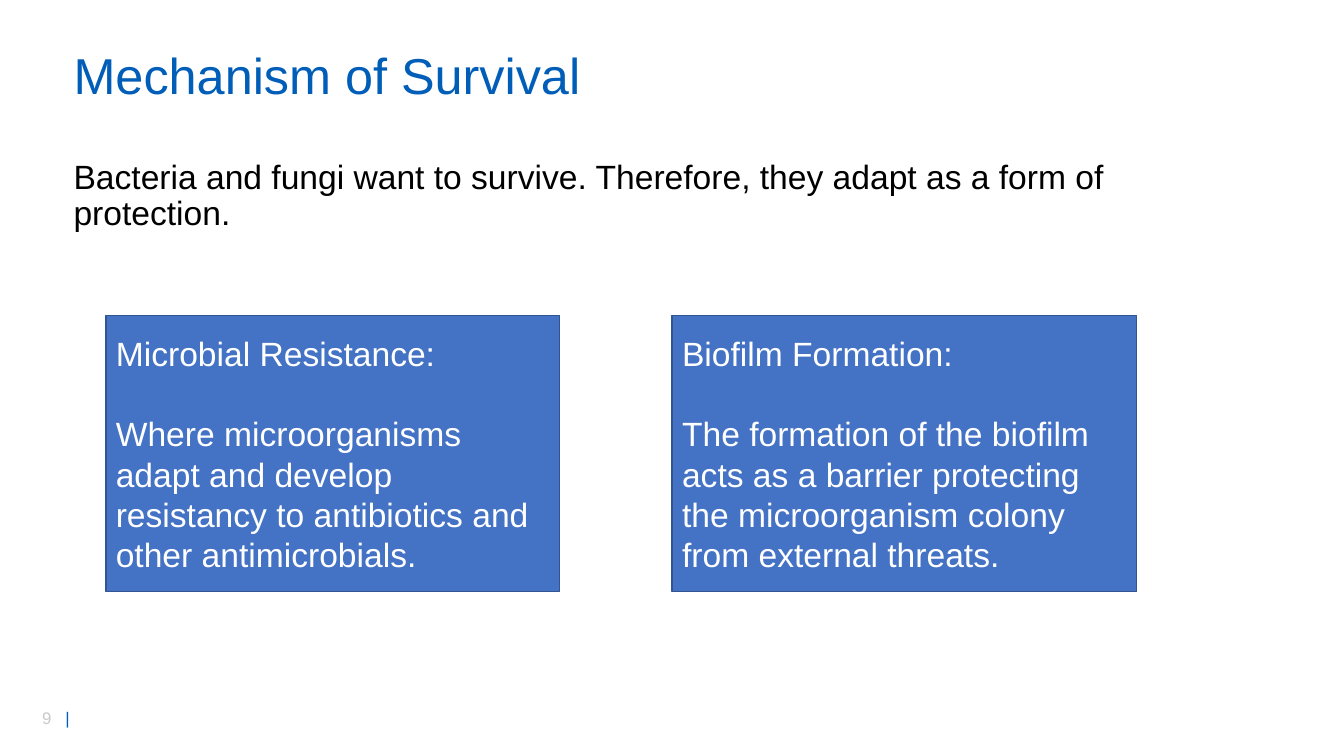
import dataclasses

import pptx
import pptx.dml.color
import pptx.enum.shapes
import pptx.enum.text
import pptx.oxml.ns
import pptx.util
from lxml import etree
from pptx.util import Cm

# Content
TITLE = "Mechanism of Survival"
INTRO = ("Bacteria and fungi want to survive. "
         "Therefore, they adapt as a form of protection.")
MECHANISMS = [
    {"left": 2.67, "width": 11.43, "text": [
        "Microbial Resistance:",
        "Where microorganisms adapt and develop resistancy to antibiotics "
        "and other antimicrobials."]},
    {"left": 16.94, "width": 11.71, "text": [
        "Biofilm Formation:",
        "The formation of the biofilm acts as a barrier protecting the "
        "microorganism colony from external threats."]},
]
PAGE_NUMBER = "9"


@dataclasses.dataclass(frozen=True)
class Theme:
    font: str = "Arial"
    heading: str = "005EB8"
    body: str = "000000"
    panel: str = "4472C4"
    panel_line: str = "325491"
    panel_text: str = "FFFFFF"
    number: str = "C9C9C9"
    title_size: float = 36
    text_size: float = 24
    number_size: float = 12
    number_tracking: float = 3.33
    panel_gap: float = 28.8


THEME = Theme()
ANCHOR = pptx.enum.text.MSO_ANCHOR


def rgb(color):
    return pptx.dml.color.RGBColor.from_string(color)


def place(box, left, top, width, height):
    box.left, box.top, box.width, box.height = map(
        Cm, (left, top, width, height))


def write(box, paragraphs, size, color, anchor=ANCHOR.TOP,
          line_spacing=1.0, gap=0, wrap=True):
    """Fill a box; a paragraph is a string or a list of (text, color, tracking)."""
    frame = box.text_frame
    frame.word_wrap = wrap
    frame.auto_size = pptx.enum.text.MSO_AUTO_SIZE.NONE
    frame.vertical_anchor = anchor
    for index, content in enumerate(paragraphs):
        para = frame.paragraphs[0] if index == 0 else frame.add_paragraph()
        properties = para._p.get_or_add_pPr()
        properties.set("marL", "0")
        properties.set("indent", "0")
        etree.SubElement(properties, pptx.oxml.ns.qn("a:buNone"))
        para.alignment = pptx.enum.text.PP_ALIGN.LEFT
        para.line_spacing = line_spacing
        para.space_before = pptx.util.Pt(gap if index else 0)
        para.space_after = pptx.util.Pt(0)
        spans = [(content, color, 0)] if isinstance(content, str) else content
        for text, span_color, tracking in spans:
            span = para.add_run()
            span.text = text
            span.font.name = THEME.font
            span.font.size = pptx.util.Pt(size)
            span.font.color.rgb = rgb(span_color)
            if tracking:
                span._r.get_or_add_rPr().set("spc", str(round(tracking * 100)))


def add_panel(page, mechanism):
    panel = page.shapes.add_shape(
        pptx.enum.shapes.MSO_SHAPE.RECTANGLE,
        Cm(mechanism["left"]), Cm(7.95), Cm(mechanism["width"]), Cm(6.96))
    panel.shadow.inherit = False
    panel.fill.solid()
    panel.fill.fore_color.rgb = rgb(THEME.panel)
    panel.line.color.rgb = rgb(THEME.panel_line)
    panel.line.width = pptx.util.Pt(1)
    write(panel, mechanism["text"], THEME.text_size, THEME.panel_text,
          anchor=ANCHOR.MIDDLE, gap=THEME.panel_gap)


def main():
    deck = pptx.Presentation()
    deck.slide_width, deck.slide_height = Cm(33.87), Cm(19.05)
    page = deck.slides.add_slide(deck.slide_layouts[1])

    # Page number, tracked out from its divider
    number = page.shapes.add_textbox(Cm(0.81), Cm(17.7), Cm(1.8), Cm(0.76))
    write(number, [[(PAGE_NUMBER + " ", THEME.number, THEME.number_tracking),
                    ("|", THEME.heading, 0)]],
          THEME.number_size, THEME.number, wrap=False)

    # Title and introduction
    title, body = page.shapes.title, page.placeholders[1]
    place(title, 1.6, 1.12, 29.57, 1.7)
    write(title, [TITLE], THEME.title_size, THEME.heading,
          anchor=ANCHOR.MIDDLE, line_spacing=0.9)
    place(body, 1.6, 3.91, 29.57, 10.67)
    write(body, [INTRO], THEME.text_size, THEME.body, line_spacing=0.9)

    # Mechanism panels
    for mechanism in MECHANISMS:
        add_panel(page, mechanism)

    deck.save("out.pptx")


if __name__ == "__main__":
    main()
